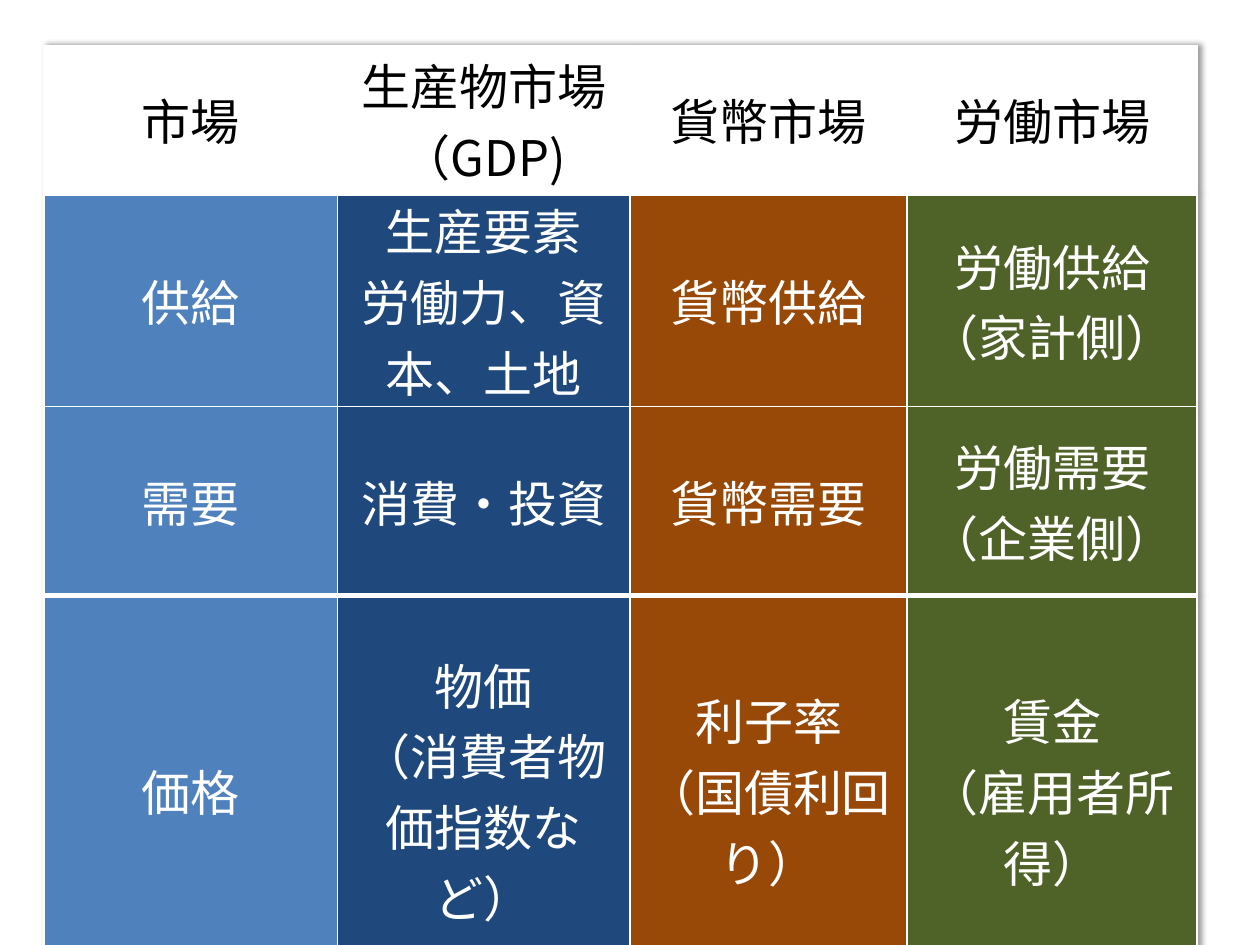
from dataclasses import dataclass

from lxml.etree import SubElement
from pptx import Presentation
from pptx.dml.color import RGBColor
from pptx.enum.text import MSO_ANCHOR, PP_ALIGN
from pptx.oxml import parse_xml
from pptx.oxml.ns import nsdecls, qn
from pptx.table import Table, _Cell
from pptx.util import Inches, Pt

COLORS = {
    "white": "FFFFFF",
    "black": "000000",
    "label": "4F81BD",
    "goods": "1F497D",
    "money": "984807",
    "labor": "4F6228",
}
FONT = "Noto Sans CJK JP"
THIN, THICK = 1, 3
ROW_HEIGHTS = [1.18, 1.5, 1.5, 3.09]


@dataclass
class Market:
    width: float
    color: str
    entries: list[str]


MARKETS = [
    Market(2.33, "label", ["市場", "供給", "需要", "価格"]),
    Market(2.32, "goods", [
        "生産物市場\n（GDP)",
        "生産要素\n労働力、資本、土地",
        "消費・投資",
        "物価\n（消費者物価指数など）",
    ]),
    Market(2.2, "money", ["貨幣市場", "貨幣供給", "貨幣需要", "利子率\n（国債利回り）"]),
    Market(2.3, "labor", [
        "労働市場",
        "労働供給\n（家計側）",
        "労働需要\n（企業側）",
        "賃金\n（雇用者所得）",
    ]),
]


def set_borders(cell: _Cell, top: int, bottom: int) -> None:
    properties = cell._tc.get_or_add_tcPr()
    widths = {"lnL": THIN, "lnR": THIN, "lnT": top, "lnB": bottom}
    for position, (side, width) in enumerate(widths.items()):
        properties.insert(position, parse_xml(
            f'<a:{side} {nsdecls("a")} w="{Pt(width)}"><a:solidFill>'
            f'<a:srgbClr val="{COLORS["white"]}"/></a:solidFill></a:{side}>'
        ))


def fill_cell(cell: _Cell, text: str, fill: str, text_color: str) -> None:
    cell.fill.solid()
    cell.fill.fore_color.rgb = RGBColor.from_string(COLORS[fill])
    cell.vertical_anchor = MSO_ANCHOR.MIDDLE
    cell.margin_left = cell.margin_right = Inches(0.07)
    cell.margin_top = cell.margin_bottom = 0
    cell.text_frame.text = text
    for paragraph in cell.text_frame.paragraphs:
        paragraph.alignment = PP_ALIGN.CENTER
        for run in paragraph.runs:
            run.font.size = Pt(28)
            run.font.color.rgb = RGBColor.from_string(COLORS[text_color])
            run.font.name = FONT
            SubElement(run.font._element, qn("a:ea"), typeface=FONT)


def add_shadow(table: Table) -> None:
    table._tbl.tblPr.insert(0, parse_xml(
        f'<a:effectLst {nsdecls("a")}><a:outerShdw blurRad="40000" dist="23000" '
        'dir="0" rotWithShape="0">'
        f'<a:srgbClr val="{COLORS["black"]}"><a:alpha val="40000"/></a:srgbClr>'
        '</a:outerShdw></a:effectLst>'
    ))


def main() -> None:
    presentation = Presentation()
    presentation.slide_width = Inches(10)
    presentation.slide_height = Inches(7.5)
    slide = presentation.slides.add_slide(presentation.slide_layouts[6])
    table = slide.shapes.add_table(
        len(ROW_HEIGHTS), len(MARKETS), Inches(0.35), Inches(0.36),
        Inches(sum(market.width for market in MARKETS)), Inches(sum(ROW_HEIGHTS)),
    ).table
    add_shadow(table)
    for row, height in zip(table.rows, ROW_HEIGHTS):
        row.height = Inches(height)
    thick_edges = {1, len(ROW_HEIGHTS) - 1}
    for column, market in enumerate(MARKETS):
        table.columns[column].width = Inches(market.width)
        for row, entry in enumerate(market.entries):
            cell = table.cell(row, column)
            if row == 0:
                fill_cell(cell, entry, "white", "black")
            else:
                fill_cell(cell, entry, market.color, "white")
            top, bottom = (
                THICK if edge in thick_edges else THIN for edge in (row, row + 1)
            )
            set_borders(cell, top, bottom)
    presentation.save("out.pptx")


if __name__ == "__main__":
    main()
